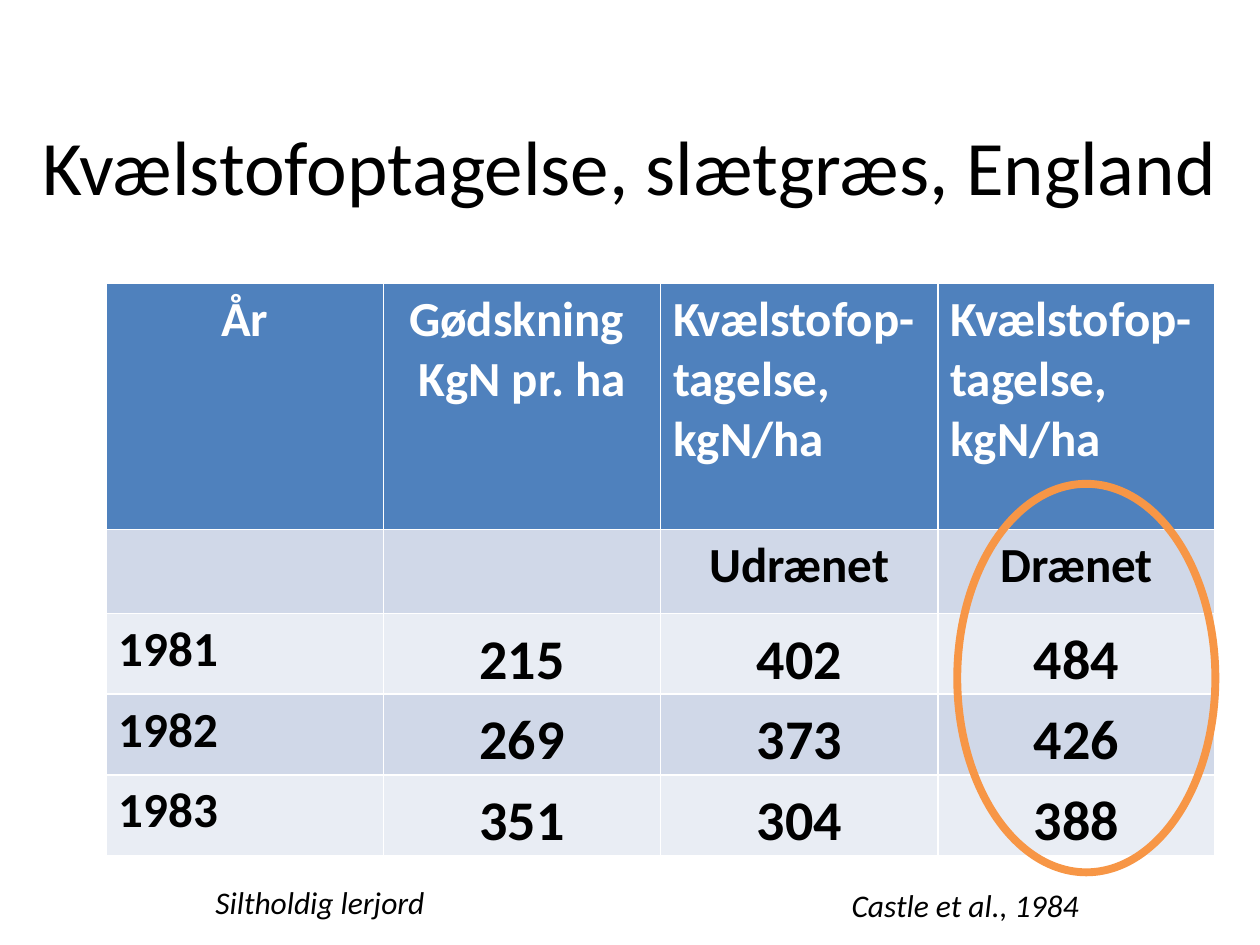
from pptx import Presentation
from pptx.util import Pt
from pptx.dml.color import RGBColor as RGB
from pptx.enum.shapes import MSO_SHAPE as Shape
from pptx.enum.text import MSO_ANCHOR as Anchor, PP_ALIGN as Align

COLORS = {"black": "000000", "white": "FFFFFF", "head": "4F81BD",
          "dark": "D0D8E8", "light": "E9EDF4", "ring": "F79646"}


def style(para, size, color="black", align=Align.LEFT, bold=False, italic=False):
    """Set the font and alignment of one paragraph."""
    para.alignment = align
    font = para.font
    font.name, font.size = "Calibri", Pt(size)
    font.bold, font.italic = bold, italic
    font.color.rgb = RGB.from_string(COLORS[color])


def label(text, left, top, width, height, size, **look):
    """Add a text box with one paragraph."""
    box = slide.shapes.add_textbox(Pt(left), Pt(top), Pt(width), Pt(height))
    frame = box.text_frame
    frame.word_wrap = True
    frame.text = text
    style(frame.paragraphs[0], size, **look)
    return frame


deck = Presentation()
deck.slide_width, deck.slide_height = Pt(720), Pt(540)
slide = deck.slides.add_slide(deck.slide_layouts[6])

title = label("Kvælstofoptagelse, slætgræs, England", 9, 49, 702, 90, 44,
              align=Align.CENTER)
title.vertical_anchor = Anchor.MIDDLE
label("Castle et al., 1984", 479.5, 502.5, 187, 29, 18, italic=True)

# Table: header, drainage row, then one row per year
uptake = "Kvælstofop-tagelse, kgN/ha"
rows = [
    ["År", "Gødskning \nKgN pr. ha", uptake, uptake],
    ["", "", "Udrænet", "Drænet"],
    ["1981", "215", "402", "484"],
    ["1982", "269", "373", "426"],
    ["1983", "351", "304", "388"],
]
heights = [140.5, 48, 46.2, 46.2, 46.2]
fills = ["head", "dark", "light", "dark", "light"]

table = slide.shapes.add_table(5, 4, Pt(60.75), Pt(162), Pt(633.6),
                               Pt(sum(heights))).table
for col in table.columns:
    col.width = Pt(158.4)
for r, (row, height, fill) in enumerate(zip(rows, heights, fills)):
    table.rows[r].height = Pt(height)
    for c, text in enumerate(row):
        cell = table.cell(r, c)
        cell.fill.solid()
        cell.fill.fore_color.rgb = RGB.from_string(COLORS[fill])
        cell.text = text
        value = r > 1 and c > 0
        if value:
            cell.vertical_anchor = Anchor.BOTTOM
            cell.margin_left = cell.margin_right = cell.margin_top = Pt(0.7)
            cell.margin_bottom = Pt(0)
        left = (r == 0 and c > 1) or (r > 1 and c == 0)
        for para in cell.text_frame.paragraphs:
            style(para, 32 if value else 28, "black" if r else "white",
                  Align.LEFT if left else Align.CENTER, bold=True)

# Ring around the drained column
ring = slide.shapes.add_shape(Shape.OVAL, Pt(547), Pt(276.5), Pt(147.5), Pt(222))
ring.shadow.inherit = False
ring.fill.background()
ring.line.color.rgb = RGB.from_string(COLORS["ring"])
ring.line.width = Pt(4.5)

label("Siltholdig lerjord", 116, 501, 187, 29, 18, italic=True)

deck.save("out.pptx")
